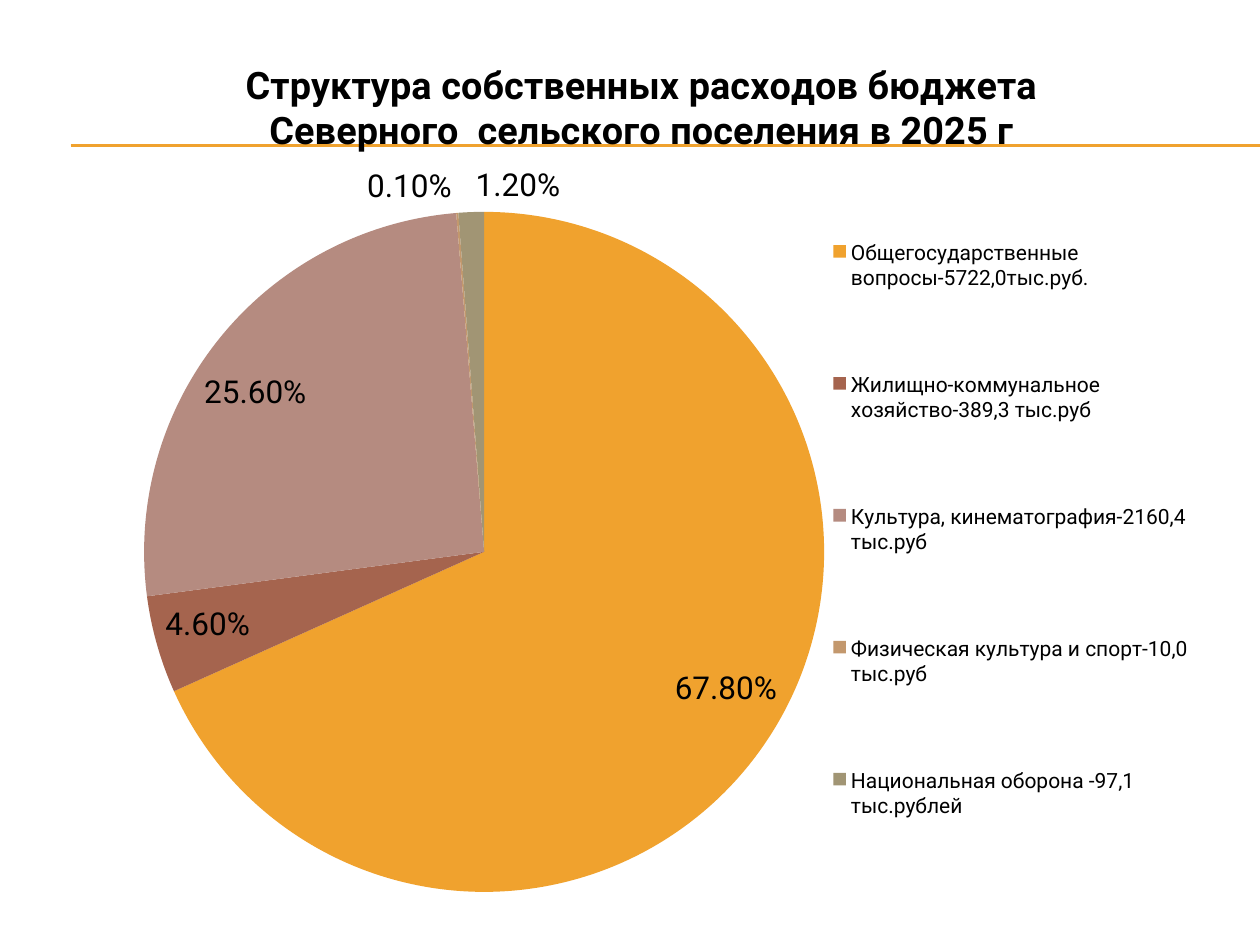
from lxml.etree import SubElement
from pptx import Presentation
from pptx.chart.data import CategoryChartData
from pptx.dml.color import RGBColor
from pptx.enum.chart import XL_CHART_TYPE, XL_LABEL_POSITION, XL_LEGEND_POSITION
from pptx.enum.shapes import MSO_CONNECTOR
from pptx.oxml import parse_xml
from pptx.oxml.ns import nsdecls, qn
from pptx.util import Inches, Pt

FONT = "Roboto"
TITLE = "Структура собственных расходов бюджета Северного  сельского поселения в 2025 г"
EXPENSES = [
    ("Общегосударственные вопросы-5722,0тыс.руб.", 0.678, "F0A22E"),
    ("Жилищно-коммунальное хозяйство-389,3 тыс.руб", 0.046, "A5644E"),
    ("Культура, кинематография-2160,4 тыс.руб", 0.256, "B58B80"),
    ("Физическая культура и спорт-10,0 тыс.руб", 0.001, "C3986D"),
    ("Национальная оборона -97,1 тыс.рублей", 0.012, "A19574"),
]
RULE_LEFT, RULE_TOPS, RULE_COLOR = 0.56, (1.15, 1.16), "F0A22E"
CHART_AREA = (0.28, 0.21, 9.5, 7.01)
TITLE_SHARE = {"x": 0.17, "y": 0.03}
PIE_SHARE = {"x": 0.09, "y": 0.21, "w": 0.57, "h": 0.77}
LEGEND_SHARE = {"x": 0.66, "y": 0.15, "w": 0.31, "h": 0.84}


def color(value):
    return RGBColor.from_string(value)


def format_font(font, size, bold=False):
    font.name = FONT
    font.size = Pt(size)
    font.bold = bold
    font.color.rgb = color("000000")


def add_rule(slide, left, top, right):
    rule = slide.shapes.add_connector(
        MSO_CONNECTOR.STRAIGHT, Inches(left), Inches(top), right, Inches(top))
    rule.line.color.rgb = color(RULE_COLOR)
    rule.line.width = Pt(0.75)
    SubElement(rule._element.spPr, qn("a:effectLst"))


def place(element, shares, inner=False):
    for old in element.findall(qn("c:layout")):
        element.remove(old)
    target = '<c:layoutTarget val="inner"/>' if inner else ""
    modes = "".join(f'<c:{side}Mode val="edge"/>' for side in "xy")
    values = "".join(f'<c:{side} val="{share}"/>' for side, share in shares.items())
    layout = parse_xml(
        f'<c:layout {nsdecls("c")}><c:manualLayout>{target}{modes}{values}'
        "</c:manualLayout></c:layout>")
    previous = element.find(qn("c:tx"))
    if previous is None:
        previous = element.find(qn("c:legendPos"))
    if previous is None:
        element.insert(0, layout)
    else:
        previous.addnext(layout)


def add_pie(slide):
    data = CategoryChartData(number_format="0.00%")
    data.categories = [name for name, share, fill in EXPENSES]
    data.add_series("Series 1", [share for name, share, fill in EXPENSES])
    chart = slide.shapes.add_chart(
        XL_CHART_TYPE.PIE, *(Inches(length) for length in CHART_AREA), data).chart
    format_font(chart.font, 18)

    chart.has_title = True
    para = chart.chart_title.text_frame.paragraphs[0]
    span = para.add_run()
    span.text = TITLE
    format_font(span.font, 21.6, bold=True)
    place(chart.chart_title._element, TITLE_SHARE)

    chart.has_legend = True
    chart.legend.position = XL_LEGEND_POSITION.RIGHT
    chart.legend.include_in_layout = False
    format_font(chart.legend.font, 12)
    place(chart.legend._element, LEGEND_SHARE)

    plot = chart.plots[0]
    plot.vary_by_categories = True
    place(chart._chartSpace.chart.plotArea, PIE_SHARE, inner=True)
    for index, (name, share, fill) in enumerate(EXPENSES):
        wedge = plot.series[0].points[index].format
        wedge.fill.solid()
        wedge.fill.fore_color.rgb = color(fill)
        wedge.line.fill.background()

    plot.has_data_labels = True
    labels = plot.data_labels
    labels.show_value = True
    labels.number_format = "0.00%"
    labels.number_format_is_linked = False
    labels.position = XL_LABEL_POSITION.BEST_FIT
    format_font(labels.font, 18)


def main():
    deck = Presentation()
    deck.slide_width, deck.slide_height = Inches(10), Inches(7.5)
    page = deck.slides.add_slide(deck.slide_layouts[6])
    page.background.fill.solid()
    page.background.fill.fore_color.rgb = color("FFFFFF")
    for top in RULE_TOPS:
        add_rule(page, RULE_LEFT, top, deck.slide_width)
    add_pie(page)
    deck.save("out.pptx")


if __name__ == "__main__":
    main()
